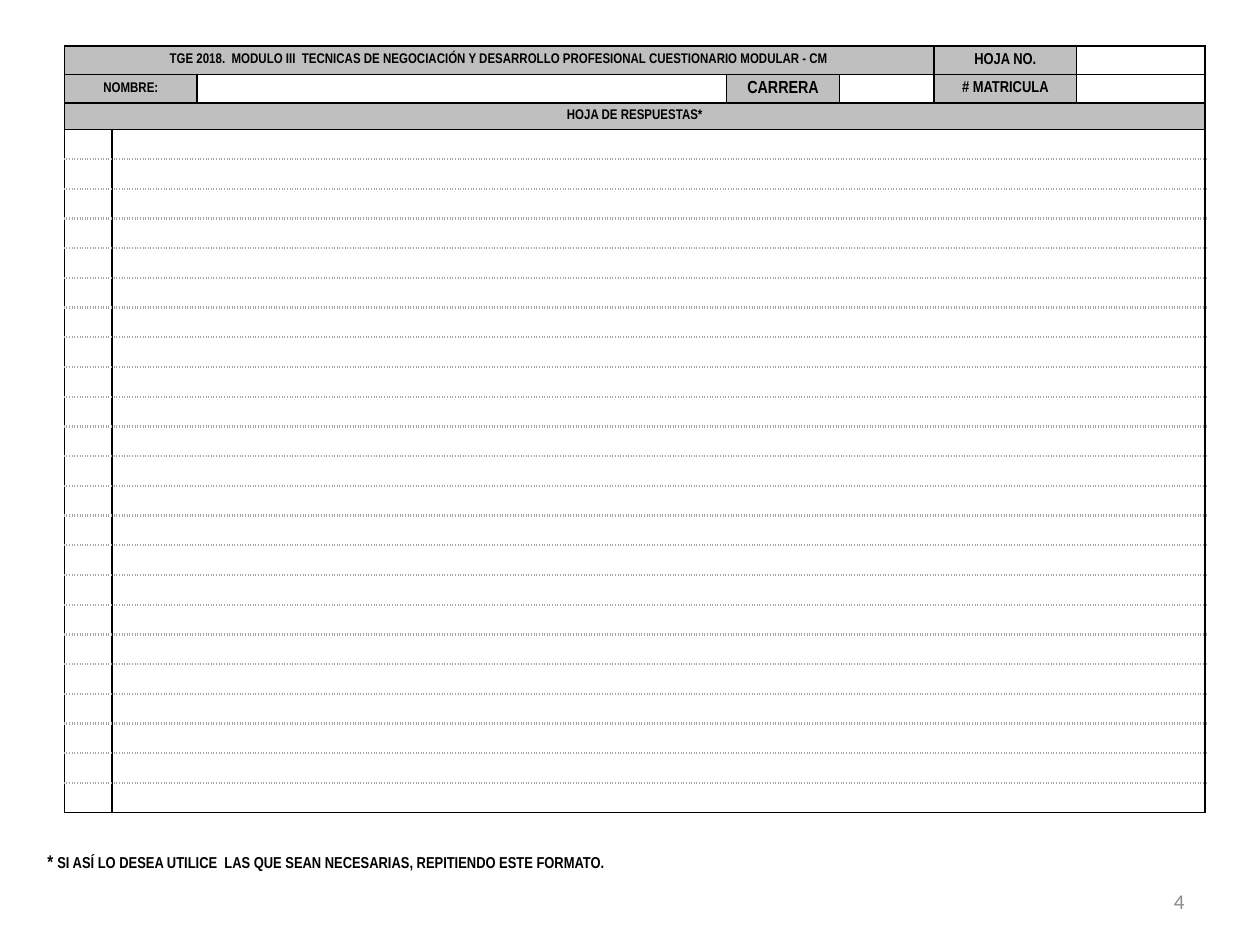
"""Build an answer sheet slide with a ruled table, a footnote and a page number."""
from lxml.etree import SubElement
from pptx import Presentation
from pptx.dml.color import RGBColor
from pptx.enum.text import MSO_ANCHOR, PP_ALIGN
from pptx.oxml.ns import qn
from pptx.util import Pt

NARROW = "Arial Narrow"
BLACK, GRAY, WHITE, PAGE_GRAY = "000000", "BFBFBF", "FFFFFF", "8C8C8C"
SOLID = (BLACK, 1, "solid")
DOTTED = ("A6A6A6", 1.5, "sysDot")

COLUMN_WIDTHS = [27.2, 48.6, 302.4, 64.8, 54, 81.2, 73.6]
HEADER_HEIGHTS = [16.3, 16.3, 15.1]
ANSWER_HEIGHT = 17
ANSWER_COUNT = 23
TABLE_LEFT, TABLE_TOP = 36.9, 26.2

HEADER_ROWS = [
    [("TGE 2018.  MODULO III  TECNICAS DE NEGOCIACIÓN Y DESARROLLO PROFESIONAL CUESTIONARIO MODULAR - CM", 8, 5),
     ("HOJA NO.", 9, 1), ("", 8, 1)],
    [("NOMBRE:", 8, 2), ("", 8, 1), ("CARRERA", 10, 1), ("", 8, 1), ("# MATRICULA", 9, 1), ("", 8, 1)],
    [("HOJA DE RESPUESTAS*", 8, 7)],
]
ANSWER_ROW = [("", 8, 1), ("", 8, 6)]
FOOTNOTE = [("* ", 10.5), ("SI ASÍ LO DESEA UTILICE  LAS QUE SEAN NECESARIAS, REPITIENDO ESTE FORMATO.", 9)]


def color(value):
    """Turn a hex string into a colour."""
    return RGBColor.from_string(value)


def style(span, size, font=NARROW, ink=BLACK, bold=True):
    """Format one run of text."""
    span.font.size = Pt(size)
    span.font.name = font
    span.font.bold = bold
    span.font.color.rgb = color(ink)


def add_border(cell, side, ink, width, dash):
    """Draw one edge of a cell."""
    line = SubElement(cell._tc.get_or_add_tcPr(), qn(f"a:ln{side}"), w=str(Pt(width)))
    fill = SubElement(line, qn("a:solidFill"))
    SubElement(fill, qn("a:srgbClr"), val=ink)
    SubElement(line, qn("a:prstDash"), val=dash)


def fill_cell(cell, text, size):
    """Set the background, margins and text of a cell."""
    cell.fill.solid()
    cell.fill.fore_color.rgb = color(GRAY if text else WHITE)
    cell.margin_top = cell.margin_bottom = 0
    cell.vertical_anchor = MSO_ANCHOR.MIDDLE
    para = cell.text_frame.paragraphs[0]
    if text:
        para.text = text
        para.alignment = PP_ALIGN.CENTER
        para.space_before = Pt(3.6)
        style(para.runs[0], size)
    else:
        SubElement(para._p, qn("a:endParaRPr"), sz=str(size * 100))


def add_answer_table(page):
    """Add the header rows and the ruled answer rows."""
    rows = HEADER_ROWS + [ANSWER_ROW] * ANSWER_COUNT
    heights = HEADER_HEIGHTS + [ANSWER_HEIGHT] * ANSWER_COUNT
    frame = page.shapes.add_table(len(rows), len(COLUMN_WIDTHS), Pt(TABLE_LEFT), Pt(TABLE_TOP),
                                  Pt(sum(COLUMN_WIDTHS)), Pt(sum(heights)))
    table = frame.table
    table.first_row = table.horz_banding = False
    for column, width in zip(table.columns, COLUMN_WIDTHS):
        column.width = Pt(width)
    for row, height in zip(table.rows, heights):
        row.height = Pt(height)

    first_answer, last_row = len(HEADER_ROWS), len(rows) - 1
    for row_index, entries in enumerate(rows):
        top = DOTTED if row_index > first_answer else SOLID
        bottom = DOTTED if first_answer <= row_index < last_row else SOLID
        start = 0
        for text, size, count in entries:
            end = start + count - 1
            for column_index in range(start, end + 1):
                cell = table.cell(row_index, column_index)
                if column_index == start:
                    add_border(cell, "L", *SOLID)
                if column_index in (start, end):
                    add_border(cell, "R", *SOLID)
                add_border(cell, "T", *top)
                add_border(cell, "B", *bottom)
                fill_cell(cell, text if column_index == start else "", size)
            if count > 1:
                table.cell(row_index, start).merge(table.cell(row_index, end))
            start = end + 1


def add_text(page, left, top, width, height, spans, **look):
    """Add a one-paragraph text box and return it."""
    box = page.shapes.add_textbox(Pt(left), Pt(top), Pt(width), Pt(height))
    box.text_frame.word_wrap = True
    para = box.text_frame.paragraphs[0]
    for text, size in spans:
        span = para.add_run()
        span.text = text
        style(span, size, **look)
    return box


def main():
    """Create and save the deck."""
    deck = Presentation()
    deck.slide_width, deck.slide_height = Pt(720), Pt(540)
    page = deck.slides.add_slide(deck.slide_layouts[6])
    number = add_text(page, 516, 500.5, 168, 28.75, [("4", 12)], font="Calibri", ink=PAGE_GRAY, bold=False)
    number.text_frame.vertical_anchor = MSO_ANCHOR.MIDDLE
    number.text_frame.paragraphs[0].alignment = PP_ALIGN.RIGHT
    add_answer_table(page)
    add_text(page, 20, 482, 669, 20.5, FOOTNOTE)
    deck.save("out.pptx")


if __name__ == "__main__":
    main()
